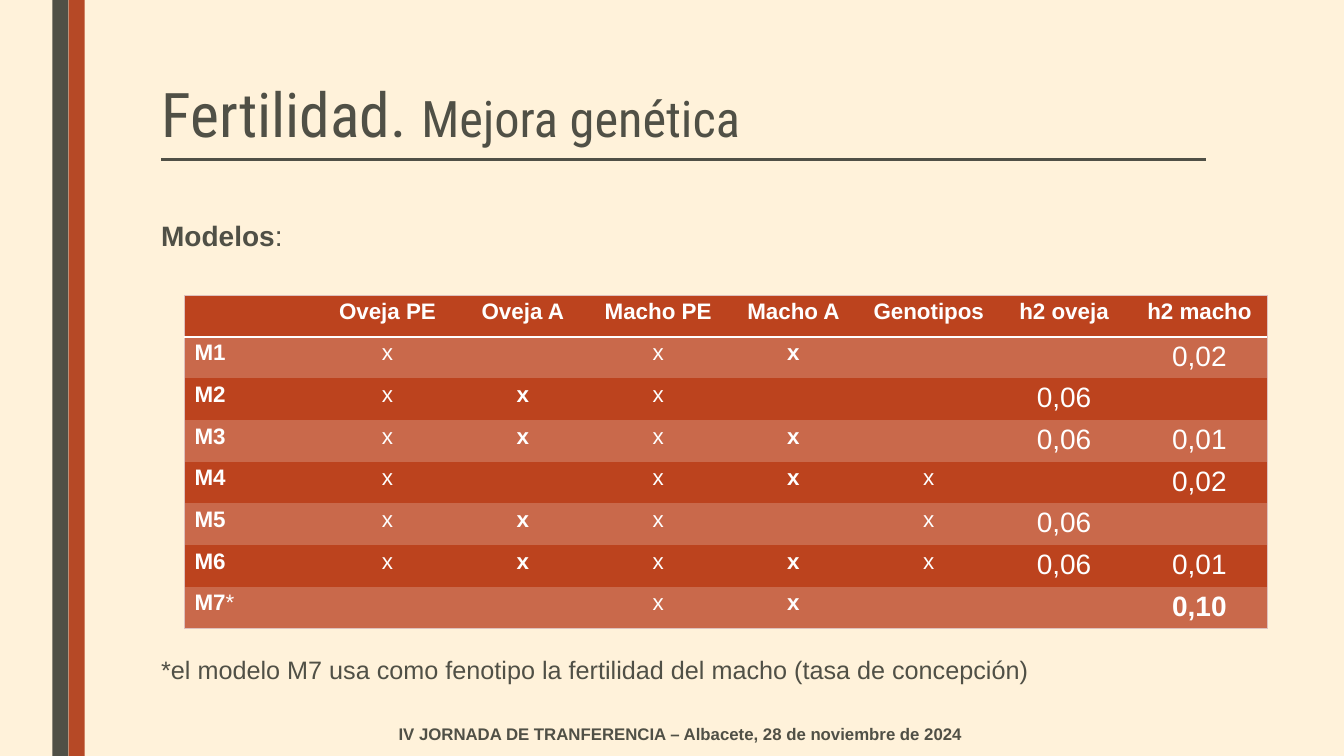
from lxml import etree
from pptx import Presentation
from pptx.dml.color import RGBColor
from pptx.enum import shapes, text
from pptx.oxml import ns
from pptx.util import Inches, Pt

COLORS = {"cream": "FFF2DA", "olive": "505046", "rust": "B64926", "row": "BC431E",
          "row_light": "C9694B", "edge": "DEC1BE", "white": "FFFFFF"}
NO_GRID_STYLE = "{2D5ABB26-0587-4C30-8999-92F81FD0307C}"
HEADERS = ["", "Oveja PE", "Oveja A", "Macho PE", "Macho A", "Genotipos", "h2 oveja", "h2 macho"]
MODELS = [
    ["M1", "x", "", "x", "x", "", "", "0,02"],
    ["M2", "x", "x", "x", "", "", "0,06", ""],
    ["M3", "x", "x", "x", "x", "", "0,06", "0,01"],
    ["M4", "x", "", "x", "x", "x", "", "0,02"],
    ["M5", "x", "x", "x", "", "x", "0,06", ""],
    ["M6", "x", "x", "x", "x", "x", "0,06", "0,01"],
    ["M7*", "", "", "x", "x", "", "", "0,10"],
]
BOLD_COLUMNS = (0, 2, 4)


def rgb(name):
    """Return a palette colour."""
    return RGBColor.from_string(COLORS[name])


def add_run(p, words, size, color="olive", bold=False, name="Arial"):
    """Add a formatted run to a paragraph."""
    r = p.add_run()
    r.text = words
    for key, value in {"size": Pt(size), "bold": bold, "name": name}.items():
        setattr(r.font, key, value)
    r.font.color.rgb = rgb(color)


def add_text(s, box, runs, align=text.PP_ALIGN.LEFT, anchor=text.MSO_ANCHOR.TOP):
    """Place one paragraph made of (words, size, bold) runs."""
    tf = s.shapes.add_textbox(*map(Inches, box)).text_frame
    tf.word_wrap = True
    tf.vertical_anchor = anchor
    p = tf.paragraphs[0]
    p.alignment = align
    for words, size, bold in runs:
        add_run(p, words, size, bold=bold)


def add_side_bars(s, left, width, height):
    """Draw the two vertical bars side by side."""
    for i, color in enumerate(("olive", "rust")):
        bar = s.shapes.add_shape(shapes.MSO_SHAPE.RECTANGLE, Inches(left + i * width), 0,
                                 Inches(width), Inches(height))
        bar.shadow.inherit = False
        bar.fill.solid()
        bar.fill.fore_color.rgb = rgb(color)
        bar.line.fill.background()


def add_title(s, left, top, width, height):
    """Fill the title placeholder and underline it."""
    title = s.shapes.title
    for key, value in zip(("left", "top", "width", "height"), (left, top, width, height)):
        setattr(title, key, Inches(value))
    tf = title.text_frame
    tf.word_wrap = True
    tf.auto_size = text.MSO_AUTO_SIZE.NONE
    tf.vertical_anchor = text.MSO_ANCHOR.BOTTOM
    p = tf.paragraphs[0]
    p.alignment = text.PP_ALIGN.LEFT
    p.line_spacing = 0.89
    for words, size in (("Fertilidad. ", 44), ("Mejora genética", 36)):
        add_run(p, words, size, name="Roboto Condensed")
    y = Inches(top + height + 0.04)
    rule = s.shapes.add_connector(shapes.MSO_CONNECTOR.STRAIGHT, Inches(left + 0.1), y,
                                  Inches(left + width - 0.04), y)
    rule.line.color.rgb = rgb("olive")
    rule.line.width = Pt(2.25)
    etree.SubElement(rule._element.spPr, ns.qn("a:effectLst"))


def set_borders(cell, borders):
    """Put (side, colour, points) borders ahead of the cell's fill."""
    tc_pr = cell._tc.get_or_add_tcPr()
    for i, (side, color, points) in enumerate(borders):
        ln = etree.Element(ns.qn(f"a:ln{side}"), w=str(Pt(points)))
        fill = etree.SubElement(ln, ns.qn("a:solidFill"))
        etree.SubElement(fill, ns.qn("a:srgbClr"), val=COLORS[color])
        tc_pr.insert(i, ln)


def fill_cell(cell, words, row, col):
    """Write and colour one cell by its place in the table."""
    cell.margin_top = cell.margin_bottom = Inches(0.04)
    cell.fill.solid()
    cell.fill.fore_color.rgb = rgb("row_light" if row % 2 else "row")
    p = cell.text_frame.paragraphs[0]
    p.alignment = text.PP_ALIGN.CENTER if col else text.PP_ALIGN.LEFT
    p.font.size = Pt(16)
    label = words.rstrip("*")
    if label:
        size = 20 if row and col > 5 else 16
        bold = row == 0 or col in BOLD_COLUMNS or label == "0,10"
        add_run(p, label, size, "white", bold)
    if label != words:
        add_run(p, "*", 16, "white")


def add_models_table(s, left, top, width, row_height):
    """Build the table of models with banded rows and a thin frame."""
    rows = [HEADERS] + MODELS
    last_row, last_col = len(rows) - 1, len(HEADERS) - 1
    frame = s.shapes.add_table(len(rows), len(HEADERS), Inches(left), Inches(top),
                               Inches(width), Inches(row_height * len(rows)))
    table = frame.table
    table._tbl.tblPr.find(ns.qn("a:tableStyleId")).text = NO_GRID_STYLE
    for i, values in enumerate(rows):
        table.rows[i].height = Inches(row_height)
        for j, words in enumerate(values):
            cell = table.cell(i, j)
            fill_cell(cell, words, i, j)
            sides = (("L", j == 0, "edge", 0.5), ("R", j == last_col, "edge", 0.5),
                     ("T", i == 0, "edge", 0.5), ("B", i == last_row, "edge", 0.5),
                     ("B", i == 0, "white", 1.5))
            set_borders(cell, [(side, color, pts) for side, shown, color, pts in sides if shown])


def main():
    """Build and save the slide."""
    prs = Presentation()
    prs.slide_width, prs.slide_height = Inches(13.33), Inches(7.5)
    s = prs.slides.add_slide(prs.slide_layouts[5])
    s.background.fill.solid()
    s.background.fill.fore_color.rgb = rgb("cream")
    add_side_bars(s, 0.52, 0.16, 7.5)
    add_title(s, 1.5, 0.75, 10.5, 0.79)
    add_text(s, (1.5, 2.12, 10.5, 0.42), [("Modelos", 20, True), (":", 20, False)])
    add_models_table(s, 1.83, 2.93, 10.74, 0.41)
    note = "*el modelo M7 usa como fenotipo la fertilidad del macho (tasa de concepción)"
    add_text(s, (1.5, 6.44, 10.5, 0.39), [(note, 18, False)])
    event = "IV JORNADA DE TRANFERENCIA – Albacete, 28 de noviembre de 2024"
    add_text(s, (2.53, 7.06, 8.44, 0.44), [(event, 12, True)],
             text.PP_ALIGN.CENTER, text.MSO_ANCHOR.MIDDLE)
    prs.save("out.pptx")


if __name__ == "__main__":
    main()
